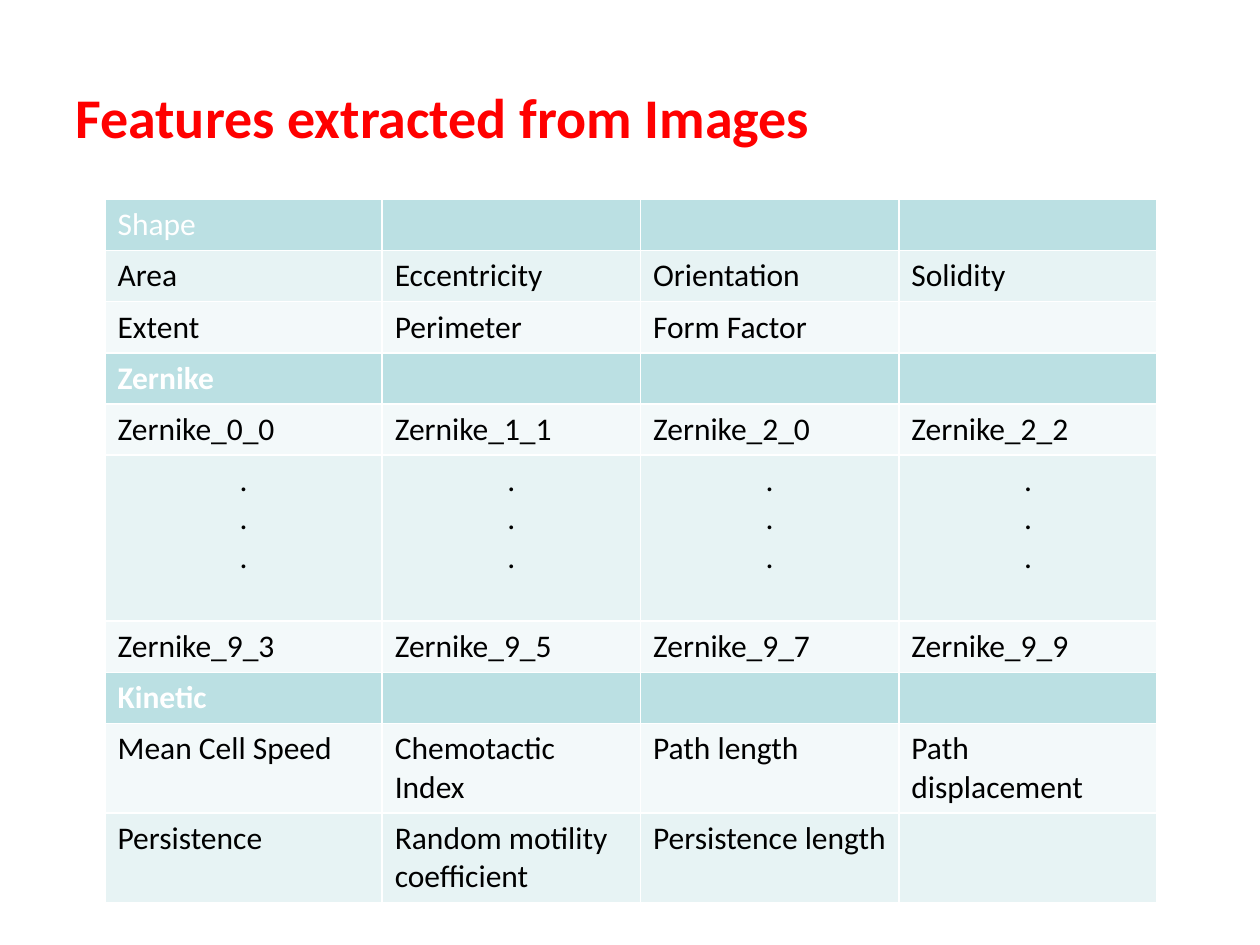
"""Build a slide with a table of the features extracted from images."""
from pptx import Presentation
from pptx import util as u
from pptx.dml.color import RGBColor
from pptx.enum import text

HEADER, LIGHT, PALE = "BBE0E3", "E7F3F4", "F3F9FA"
DOTS = ".\n.\n."
COLUMNS = [158.4, 147.6, 147.6, 147.6]
ROWS = [
    (29.2, HEADER, ["Shape"]),
    (29.2, LIGHT, ["Area", "Eccentricity", "Orientation", "Solidity"]),
    (29.2, PALE, ["Extent", "Perimeter", "Form Factor"]),
    (29.2, HEADER, ["Zernike"]),
    (29.2, PALE, ["Zernike_0_0", "Zernike_1_1", "Zernike_2_0", "Zernike_2_2"]),
    (95, LIGHT, [DOTS] * 4),
    (29.2, PALE, ["Zernike_9_3", "Zernike_9_5", "Zernike_9_7", "Zernike_9_9"]),
    (29.2, HEADER, ["Kinetic"]),
    (51.2, PALE, ["Mean Cell Speed", "Chemotactic Index", "Path length", "Path displacement"]),
    (51.2, LIGHT, ["Persistence", "Random motility coefficient", "Persistence length"]),
]


def rgb(value):
    """Return the colour for a hex string."""
    return RGBColor.from_string(value)


def write(tf, content, size=18, color="000000", bold=False, align=text.PP_ALIGN.LEFT):
    """Fill a text frame, one paragraph for each line."""
    tf.word_wrap = True
    for i, line in enumerate(content.split("\n")):
        p = tf.add_paragraph() if i else tf.paragraphs[0]
        p.alignment = align
        r = p.add_run()
        r.text = line
        r.font.name = "Calibri"
        r.font.size = u.Pt(size)
        r.font.bold = bold
        r.font.color.rgb = rgb(color)


def add_title(s, content):
    """Add the slide title."""
    sp = s.shapes.add_textbox(u.Pt(36), u.Pt(21.6), u.Pt(648), u.Pt(90))
    sp.text_frame.vertical_anchor = text.MSO_ANCHOR.MIDDLE
    write(sp.text_frame, content, size=32, color="FF0000", bold=True)


def add_features(s):
    """Add the feature table with its section rows."""
    width, height = sum(COLUMNS), sum(row[0] for row in ROWS)
    frame = s.shapes.add_table(len(ROWS), len(COLUMNS), u.Pt(60), u.Pt(114), u.Pt(width), u.Pt(height))
    table = frame.table
    for column, size in zip(table.columns, COLUMNS):
        column.width = u.Pt(size)
    for i, (size, fill, labels) in enumerate(ROWS):
        table.rows[i].height = u.Pt(size)
        for cell in table.rows[i].cells:
            cell.fill.solid()
            cell.fill.fore_color.rgb = rgb(fill)
        for cell, label in zip(table.rows[i].cells, labels):
            section = fill == HEADER
            write(cell.text_frame, label,
                  color="FFFFFF" if section else "000000",
                  bold=section and i > 0,
                  align=text.PP_ALIGN.CENTER if label == DOTS else text.PP_ALIGN.LEFT)


def main():
    """Build and save the presentation."""
    prs = Presentation()
    prs.slide_width, prs.slide_height = u.Pt(720), u.Pt(540)
    s = prs.slides.add_slide(prs.slide_layouts[6])
    add_title(s, "Features extracted from Images")
    add_features(s)
    prs.save("out.pptx")


if __name__ == "__main__":
    main()
